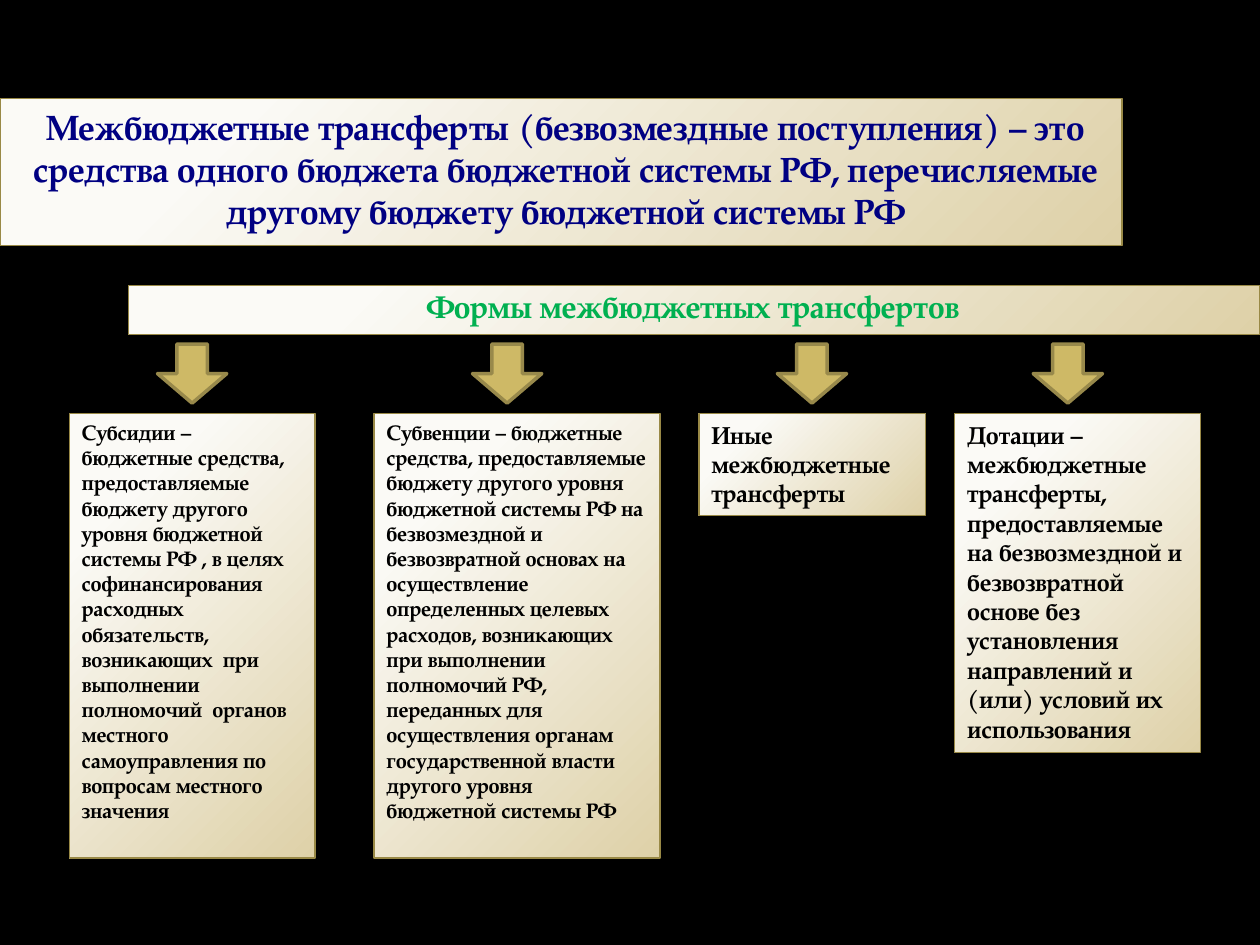
from lxml import etree
from pptx import Presentation
from pptx.dml.color import RGBColor
from pptx.enum.shapes import MSO_SHAPE
from pptx.enum.text import MSO_ANCHOR, PP_ALIGN
from pptx.oxml.ns import qn
from pptx.util import Pt

FONT = "TeX Gyre Pagella"
COLORS = {
    "background": "000000",
    "panel_light": "FBFAF6",
    "panel_dark": "DED1A8",
    "panel_line": "998946",
    "arrow": "CEB966",
    "arrow_line": "98894B",
    "title": "000082",
    "heading": "00B050",
    "body": "000000",
}

TITLE = ("Межбюджетные трансферты (безвозмездные поступления) – это средства "
         "одного бюджета бюджетной системы РФ, перечисляемые другому бюджету "
         "бюджетной системы РФ")
HEADING = "Формы межбюджетных трансфертов"

# Left, width, height, arrow left, text size, text
FORMS = [
    (39.6, 140.4, 254.2, 90, 12,
     "Субсидии – бюджетные средства, предоставляемые бюджету другого уровня "
     "бюджетной системы РФ , в целях софинансирования расходных  обязательств, "
     "возникающих  при выполнении полномочий  органов местного самоуправления "
     "по вопросам местного значения"),
    (213.8, 163.4, 254.2, 270, 12,
     "Субвенции – бюджетные средства, предоставляемые бюджету другого уровня "
     "бюджетной системы РФ на безвозмездной и безвозвратной основах на "
     "осуществление определенных целевых расходов, возникающих при выполнении "
     "полномочий РФ, переданных для осуществления органам государственной "
     "власти другого уровня бюджетной системы РФ"),
    (399.4, 129.6, 58.3, 444.2, 14, "Иные межбюджетные трансферты"),
    (545.6, 140.4, 193.7, 590.4, 14,
     "Дотации – межбюджетные трансферты, предоставляемые на безвозмездной и "
     "безвозвратной основе без установления направлений и (или) условий их "
     "использования"),
]


def color(name):
    return RGBColor.from_string(COLORS[name])


def add_shape(page, kind, box, line, line_width):
    shape = page.shapes.add_shape(kind, *(Pt(value) for value in box))
    shape.shadow.inherit = False
    shape.line.color.rgb = color(line)
    shape.line.width = Pt(line_width)
    return shape


def fill_radial(shape):
    """Circular gradient that spreads from the lower right corner."""
    shape.fill.gradient()
    stops = zip(shape.fill.gradient_stops,
                [(0.2, "panel_light"), (1, "panel_dark")])
    for stop, (position, name) in stops:
        stop.position = position
        stop.color.rgb = color(name)
    gradient = shape.element.spPr.find(qn("a:gradFill"))
    gradient.remove(gradient.find(qn("a:lin")))
    circle = etree.SubElement(gradient, qn("a:path"), path="circle")
    etree.SubElement(circle, qn("a:fillToRect"),
                     l="-15000", t="-15000", r="115000", b="115000")


def write_text(shape, text, size, name, align=PP_ALIGN.LEFT,
               anchor=MSO_ANCHOR.TOP, margins=(7.2, 3.6, 7.2, 3.6),
               line_spacing=1.0, space_before=0):
    frame = shape.text_frame
    frame.word_wrap = True
    frame.vertical_anchor = anchor
    (frame.margin_left, frame.margin_top,
     frame.margin_right, frame.margin_bottom) = (Pt(m) for m in margins)
    para = frame.paragraphs[0]
    para.alignment = align
    para.line_spacing = line_spacing
    para.space_before = Pt(space_before)
    span = para.add_run()
    span.text = text
    span.font.name = FONT
    span.font.size = Pt(size)
    span.font.bold = True
    span.font.color.rgb = color(name)


def add_panel(page, box, text, size, name, **text_format):
    panel = add_shape(page, MSO_SHAPE.RECTANGLE, box, "panel_line", 0.75)
    fill_radial(panel)
    write_text(panel, text, size, name, **text_format)


def add_arrow(page, box):
    arrow = add_shape(page, MSO_SHAPE.DOWN_ARROW, box, "arrow_line", 2)
    arrow.fill.solid()
    arrow.fill.fore_color.rgb = color("arrow")
    arrow.adjustments[0] = 0.44
    arrow.adjustments[1] = 0.5


def add_form(page, box, arrow_left, size, text):
    """A panel with its arrow just above."""
    left, top, width, height = box
    add_arrow(page, (arrow_left, top - 39.6, 39.6, 33.8))
    add_panel(page, box, text, size, "body")


def main():
    deck = Presentation()
    deck.slide_width, deck.slide_height = Pt(720), Pt(540)
    page = deck.slides.add_slide(deck.slide_layouts[6])
    page.background.fill.solid()
    page.background.fill.fore_color.rgb = color("background")

    # Definition and heading
    add_panel(page, (0, 56.2, 641.2, 84.2), TITLE, 20, "title",
              align=PP_ALIGN.CENTER, anchor=MSO_ANCHOR.MIDDLE,
              margins=(7.2, 0, 1.4, 3.6))
    add_panel(page, (73.4, 163, 646.6, 28), HEADING, 18, "heading",
              align=PP_ALIGN.CENTER, margins=(0, 3.6, 1.4, 3.6),
              line_spacing=0.9, space_before=3.6)

    # Four forms of transfer
    for left, width, height, arrow_left, size, text in FORMS:
        add_form(page, (left, 236.2, width, height), arrow_left, size, text)

    deck.save("out.pptx")


if __name__ == "__main__":
    main()
